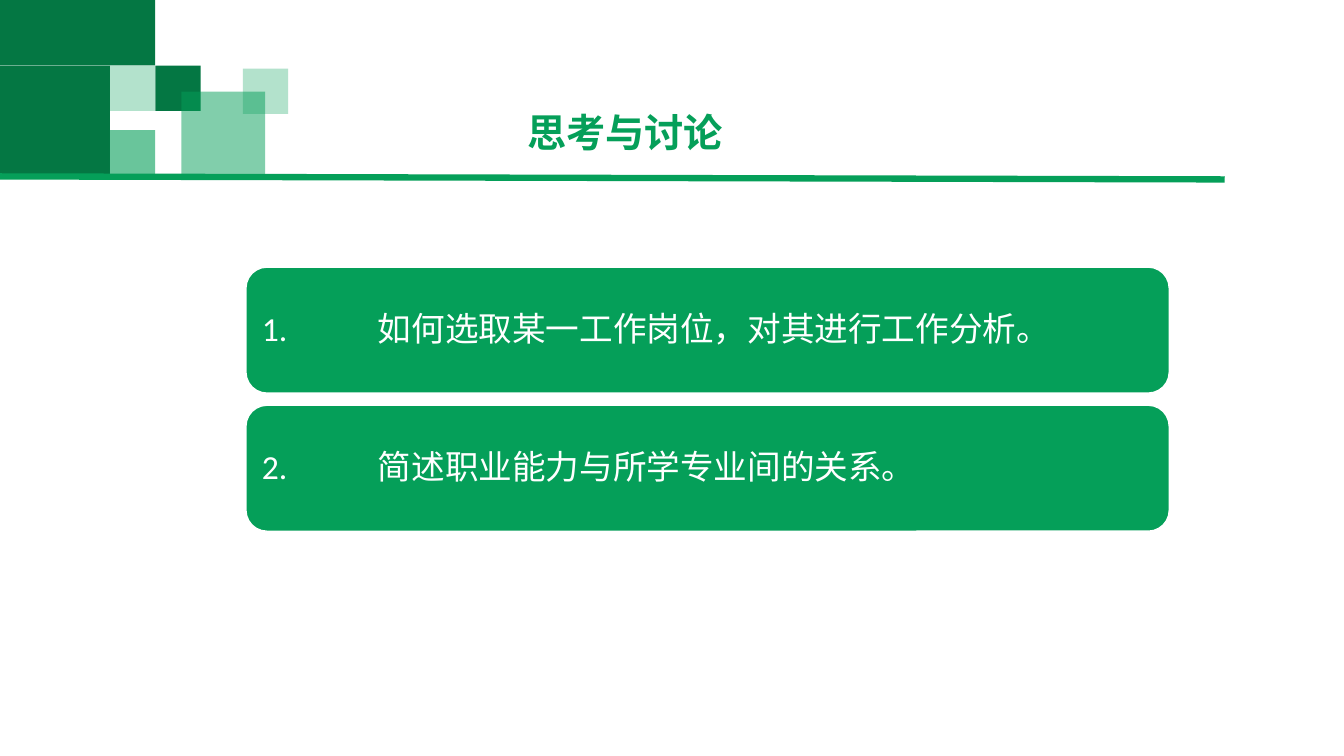
from dataclasses import dataclass

from lxml import etree
from pptx import Presentation
from pptx import util as u
from pptx.dml.color import RGBColor
from pptx.enum import shapes, text
from pptx.oxml.ns import qn


@dataclass(frozen=True)
class Theme:
    green: str = "059F59"
    dark_green: str = "047743"
    white: str = "FFFFFF"
    font: str = "Calibri"
    title_size: int = 28
    question_size: int = 24
    rule_width: float = 4.5
    border_width: float = 1


class Deck:
    """Draws on one slide; lengths count grid cells of a tenth of an inch."""

    CELL = u.Inches(0.1)
    COLUMNS, ROWS = 133.33, 75

    def __init__(self, theme):
        self.theme = theme
        self.presentation = Presentation()
        self.presentation.slide_width = self.cells(self.COLUMNS)
        self.presentation.slide_height = self.cells(self.ROWS)
        title_only = self.presentation.slide_layouts[5]
        self.slide = self.presentation.slides.add_slide(title_only)

    def cells(self, count):
        return u.Emu(round(count * self.CELL))

    def set_words(self, frame, words, size, color, bold=False):
        frame_format = {
            "word_wrap": True,
            "vertical_anchor": text.MSO_ANCHOR.MIDDLE,
            "margin_left": self.cells(1),
            "margin_top": 0,
            "margin_bottom": 0,
        }
        for key, value in frame_format.items():
            setattr(frame, key, value)
        frame.text = words
        paragraph = frame.paragraphs[0]
        paragraph.alignment = text.PP_ALIGN.LEFT
        paragraph.line_spacing = 0.9
        font_format = {"name": self.theme.font, "size": u.Pt(size), "bold": bold}
        font = paragraph.runs[0].font
        for key, value in font_format.items():
            setattr(font, key, value)
        font.color.rgb = RGBColor.from_string(color)
        return paragraph

    def title(self, words, left, top, width, height):
        heading = self.slide.shapes.title
        place = {"left": left, "top": top, "width": width, "height": height}
        for side, count in place.items():
            setattr(heading, side, self.cells(count))
        self.set_words(heading.text_frame, words, self.theme.title_size,
                       self.theme.green, bold=True)

    def block(self, left, top, width, height, color, opacity=100,
              kind=shapes.MSO_SHAPE.RECTANGLE):
        place = [self.cells(n) for n in (left, top, width, height)]
        block = self.slide.shapes.add_shape(kind, *place)
        block.shadow.inherit = False
        block.fill.solid()
        block.fill.fore_color.rgb = RGBColor.from_string(color)
        block.line.fill.background()
        if opacity < 100:
            tint = block._element.spPr.find(qn("a:solidFill"))[0]
            etree.SubElement(tint, qn("a:alpha"), val=str(opacity * 1000))
        return block

    def rule(self, *ends):
        rule = self.slide.shapes.add_connector(
            shapes.MSO_CONNECTOR.STRAIGHT, *map(self.cells, ends))
        rule.line.color.rgb = RGBColor.from_string(self.theme.green)
        rule.line.width = u.Pt(self.theme.rule_width)
        etree.SubElement(rule._element.spPr, qn("a:effectLst"))

    def question(self, number, words, left, top, width, height, tab):
        card = self.block(left, top, width, height, self.theme.green,
                          kind=shapes.MSO_SHAPE.ROUNDED_RECTANGLE)
        card.line.color.rgb = RGBColor.from_string(self.theme.white)
        card.line.width = u.Pt(self.theme.border_width)
        paragraph = self.set_words(card.text_frame, f"{number}.\t{words}",
                                   self.theme.question_size, self.theme.white)
        stops = etree.SubElement(paragraph._p.get_or_add_pPr(), qn("a:tabLst"))
        etree.SubElement(stops, qn("a:tab"), pos=str(self.cells(tab)), algn="l")


def main():
    theme = Theme()
    deck = Deck(theme)

    tile = 4.5
    mosaic = [
        (0, 6.5, 10.9, 10.9, theme.dark_green, 100),
        (0, 0, 15.4, 6.5, theme.dark_green, 100),
        (10.9, 6.5, tile, tile, theme.green, 30),
        (15.4, 6.5, tile, tile, theme.dark_green, 100),
        (10.9, 12.9, tile, tile, theme.green, 60),
        (18, 9.1, 8.3, 8.3, theme.green, 50),
        (24.1, 6.8, tile, tile, theme.green, 30),
    ]
    for tile_format in mosaic:
        deck.block(*tile_format)

    deck.title("思考与讨论", 51.3, 10.8, 43.3, 5.2)
    deck.rule(0, 17.5, 121.5, 17.8)

    questions = [
        "如何选取某一工作岗位，对其进行工作分析。",
        "简述职业能力与所学专业间的关系。",
    ]
    first_top, pitch = 26.5, 13.7
    for row, words in enumerate(questions):
        deck.question(row + 1, words, 24.4, first_top + row * pitch,
                      91.6, 12.5, tab=11.5)

    deck.presentation.save("out.pptx")


if __name__ == "__main__":
    main()
